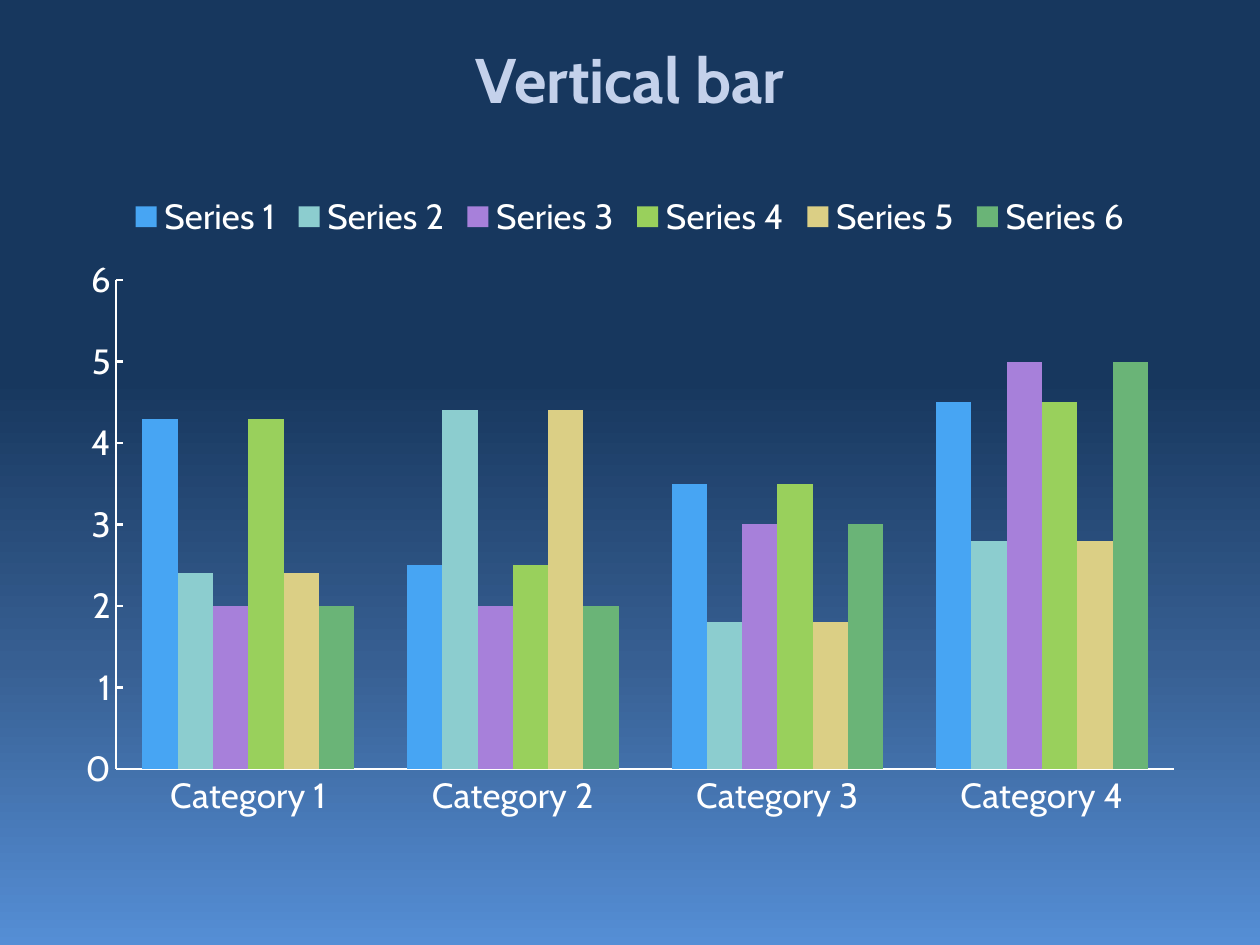
import copy

import pptx
import pptx.chart.data
import pptx.dml.color
import pptx.enum.chart
import pptx.enum.text
import pptx.oxml.ns
import pptx.util

Inches = pptx.util.Inches
Pt = pptx.util.Pt
TICK = pptx.enum.chart.XL_TICK_MARK


def rgb(value):
    return pptx.dml.color.RGBColor.from_string(value)


def apply(obj, values):
    for name, value in values.items():
        setattr(obj, name, value)


class Deck:
    face = "Cabin"
    white = "FFFFFF"
    title_color = "C4D1EB"

    def __init__(self, width, height):
        self.prs = pptx.Presentation()
        apply(self.prs, {"slide_width": Inches(width), "slide_height": Inches(height)})
        self.s = self.prs.slides.add_slide(self.prs.slide_layouts[6])

    def font(self, font, size, color, bold=False):
        apply(font, {"name": self.face, "size": Pt(size), "bold": bold})
        font.color.rgb = rgb(color)

    def background(self, stops):
        fill = self.s.background.fill
        fill.gradient()
        fill.gradient_angle = 270
        gs_list = next(self.s.element.iter(pptx.oxml.ns.qn("a:gsLst")))
        while len(gs_list) < len(stops):
            gs_list.append(copy.deepcopy(gs_list[0]))
        for stop, (position, color) in zip(fill.gradient_stops, stops):
            stop.position = position
            stop.color.rgb = rgb(color)

    def title(self, text, box):
        sp = self.s.shapes.add_textbox(*map(Inches, box))
        tf = sp.text_frame
        apply(tf, {"word_wrap": True,
                   "vertical_anchor": pptx.enum.text.MSO_ANCHOR.MIDDLE})
        p = tf.paragraphs[0]
        p.alignment = pptx.enum.text.PP_ALIGN.CENTER
        r = p.add_run()
        r.text = text
        self.font(r.font, 36, self.title_color, True)

    def axis(self, axis, values):
        apply(axis, {"has_major_gridlines": False,
                     "minor_tick_mark": TICK.NONE, **values})
        self.font(axis.tick_labels.font, 20, self.white)
        line = axis.format.line
        line.width = Pt(1.5)
        line.color.rgb = rgb(self.white)

    def columns(self, box, categories, series):
        data = pptx.chart.data.CategoryChartData()
        data.categories = categories
        for name, values, _ in series:
            data.add_series(name, values)
        chart = self.s.shapes.add_chart(
            pptx.enum.chart.XL_CHART_TYPE.COLUMN_CLUSTERED,
            *map(Inches, box), data).chart
        self.font(chart.font, 18, self.white)
        chart.font.name = "Calibri"
        apply(chart, {"has_title": False, "has_legend": True})
        apply(chart.legend, {
            "position": pptx.enum.chart.XL_LEGEND_POSITION.TOP,
            "include_in_layout": False})
        self.font(chart.legend.font, 20, self.white)
        self.axis(chart.category_axis, {"major_tick_mark": TICK.NONE})
        self.axis(chart.value_axis, {
            "major_tick_mark": TICK.INSIDE, "minimum_scale": 0,
            "maximum_scale": 6, "major_unit": 1})
        plot = chart.plots[0]
        apply(plot, {"gap_width": 150, "overlap": 0, "vary_by_categories": False})
        for bar, (_, _, color) in zip(plot.series, series):
            bar.format.fill.solid()
            bar.format.fill.fore_color.rgb = rgb(color)


def main():
    deck = Deck(10, 7.5)
    deck.background([(0, "17375E"), (0.4, "17375E"), (0.7, "375F92"), (1, "558ED5")])
    deck.title("Vertical bar", (0.5, 0, 9, 1.25))
    patterns = [(4.3, 2.5, 3.5, 4.5), (2.4, 4.4, 1.8, 2.8), (2, 2, 3, 5)]
    colors = ["47A5F3", "8CCDCF", "A780DA", "99D05C", "DBCF85", "6AB477"]
    series = [(f"Series {i + 1}", patterns[i % 3], color)
              for i, color in enumerate(colors)]
    categories = [f"Category {i}" for i in range(1, 5)]
    deck.columns((0.5, 1.42, 9, 5.17), categories, series)
    deck.prs.save("out.pptx")


if __name__ == "__main__":
    main()
